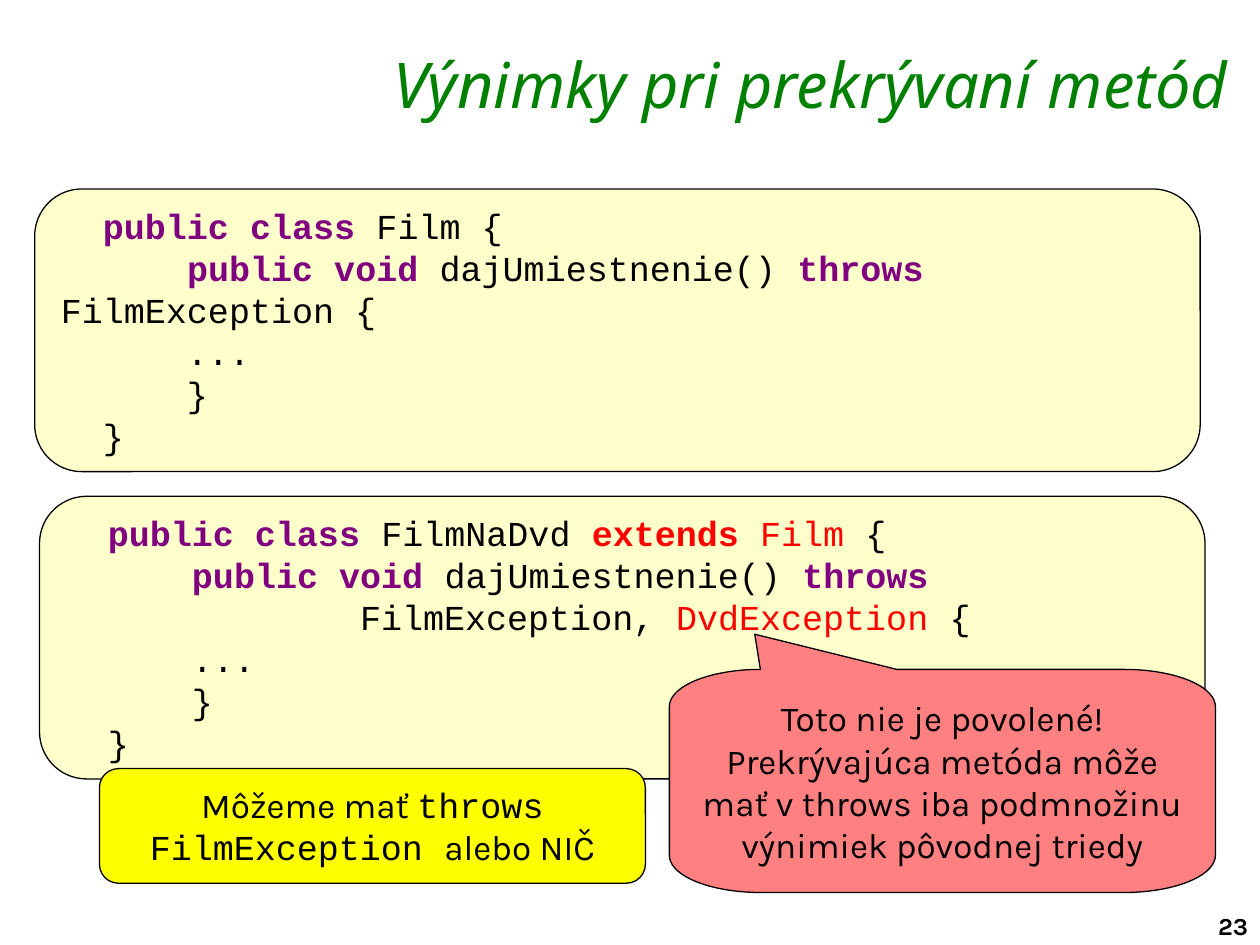
import math
from typing import NamedTuple

import pptx
from pptx import util as u
from pptx.dml import color
from pptx.enum import shapes, text

BLACK = color.RGBColor(0x00, 0x00, 0x00)
GREEN = color.RGBColor(0x00, 0x80, 0x00)
PURPLE = color.RGBColor(0x80, 0x00, 0x80)
RED = color.RGBColor(0xFF, 0x00, 0x00)
CREAM = color.RGBColor(0xFF, 0xFF, 0xCC)
YELLOW = color.RGBColor(0xFF, 0xFF, 0x00)
PINK = color.RGBColor(0xFF, 0x80, 0x80)

CODE_FONT = "Courier New"
BODY_FONT = "Karla"
TITLE_FONT = "Noto Sans"


class Span(NamedTuple):
    words: str
    colour: color.RGBColor = BLACK
    bold: bool = False
    font: str | None = None


class Panel(NamedTuple):
    left: float
    top: float
    width: float
    height: float
    fill: color.RGBColor
    lines: list[list[Span]]
    font: str = CODE_FONT
    align: text.PP_ALIGN = text.PP_ALIGN.LEFT


def keyword(words: str) -> Span:
    return Span(words, PURPLE, True)


CODE_END = [[Span("      ...")], [Span("      }")], [Span("  }")]]
METHOD_START = [
    Span("      "),
    keyword("public void "),
    Span("dajUmiestnenie() "),
    keyword("throws "),
]

PANELS = [
    Panel(19.8, 108, 666, 161.5, CREAM, [
        [keyword("  public class"), Span(" Film {")],
        METHOD_START + [Span("FilmException {")],
        *CODE_END,
    ]),
    Panel(22.6, 283.6, 666, 161.5, CREAM, [
        [keyword("  public class"), Span(" FilmNaDvd "), Span("extends", RED, True),
         Span(" Film", RED), Span(" {")],
        METHOD_START,
        [Span("              FilmException, "), Span("DvdException", RED), Span(" {")],
        *CODE_END,
    ]),
    Panel(56.8, 439.2, 312, 65.5, YELLOW, [
        [Span("Môžeme mať "), Span("throws", font=CODE_FONT)],
        [Span("FilmException ", font=CODE_FONT), Span("alebo NIČ")],
    ], BODY_FONT, text.PP_ALIGN.CENTER),
]

WARNING = [
    "Toto nie je povolené!",
    "Prekrývajúca metóda môže",
    "mať v throws iba podmnožinu",
    "výnimiek pôvodnej triedy",
]


def write_text(shape, lines: list[list[Span]], *, font: str, size: float = 20,
               align=text.PP_ALIGN.LEFT, anchor=text.MSO_ANCHOR.MIDDLE,
               italic: bool = False, wrap: bool = True,
               margin_top: float = 3.6) -> None:
    frame = shape.text_frame
    frame.word_wrap = wrap
    frame.vertical_anchor = anchor
    frame.margin_left = frame.margin_right = u.Pt(7.2)
    frame.margin_top, frame.margin_bottom = u.Pt(margin_top), u.Pt(3.6)
    for index, line in enumerate(lines):
        para = frame.paragraphs[0] if index == 0 else frame.add_paragraph()
        para.alignment = align
        for span in line:
            run = para.add_run()
            run.text = span.words
            run.font.name = span.font or font
            run.font.size = u.Pt(size)
            run.font.bold = span.bold
            run.font.italic = italic
            run.font.color.rgb = span.colour


def paint(shape, fill: color.RGBColor) -> None:
    shape.shadow.inherit = False
    shape.fill.solid()
    shape.fill.fore_color.rgb = fill
    shape.line.color.rgb = BLACK
    shape.line.width = u.Pt(0)


def add_panel(page, panel: Panel) -> None:
    shape = page.shapes.add_shape(
        shapes.MSO_SHAPE.ROUNDED_RECTANGLE, u.Pt(panel.left), u.Pt(panel.top),
        u.Pt(panel.width), u.Pt(panel.height))
    shape.adjustments[0] = 1 / 6
    paint(shape, panel.fill)
    write_text(shape, panel.lines, font=panel.font, align=panel.align)


def add_callout(page, left: float, top: float, width: float, height: float,
                tip: tuple[float, float]) -> None:
    radius_x, radius_y = width / 6, height / 6
    right, bottom = left + width, top + height
    centres = [
        (right - radius_x, top + radius_y, -90),
        (right - radius_x, bottom - radius_y, 0),
        (left + radius_x, bottom - radius_y, 90),
        (left + radius_x, top + radius_y, 180),
    ]
    points = [tip, (left + width * 5 / 12, top)]
    for centre_x, centre_y, start in centres:
        for degrees in range(start, start + 91, 5):
            angle = math.radians(degrees)
            points.append((centre_x + radius_x * math.cos(angle),
                           centre_y + radius_y * math.sin(angle)))
    builder = page.shapes.build_freeform(u.Pt(tip[0]), u.Pt(tip[1]))
    builder.add_line_segments([(u.Pt(x), u.Pt(y)) for x, y in points[1:]], close=True)
    shape = builder.convert_to_shape()
    paint(shape, PINK)
    write_text(shape, [[Span(line)] for line in WARNING], font=BODY_FONT,
               align=text.PP_ALIGN.CENTER, wrap=False,
               margin_top=top - tip[1] + 3.6)


def add_label(page, left: float, top: float, width: float, height: float,
              span: Span, **style) -> None:
    box = page.shapes.add_textbox(u.Pt(left), u.Pt(top), u.Pt(width), u.Pt(height))
    write_text(box, [[span]], anchor=text.MSO_ANCHOR.TOP, **style)


def main() -> None:
    deck = pptx.Presentation()
    deck.slide_width, deck.slide_height = u.Pt(720), u.Pt(540)
    page = deck.slides.add_slide(deck.slide_layouts[6])
    add_label(page, 689, 517, 36.7, 23.8, Span("23", bold=True),
              font=BODY_FONT, size=14, wrap=False)
    add_label(page, 126.7, 23.8, 581.8, 41.8,
              Span("Výnimky pri prekrývaní metód", GREEN), font=TITLE_FONT,
              size=36, italic=True, align=text.PP_ALIGN.RIGHT, margin_top=2)
    for panel in PANELS[:2]:
        add_panel(page, panel)
    add_callout(page, 382.5, 382.5, 312, 127.5, tip=(431.3, 362.4))
    add_panel(page, PANELS[2])
    deck.save("out.pptx")


if __name__ == "__main__":
    main()
